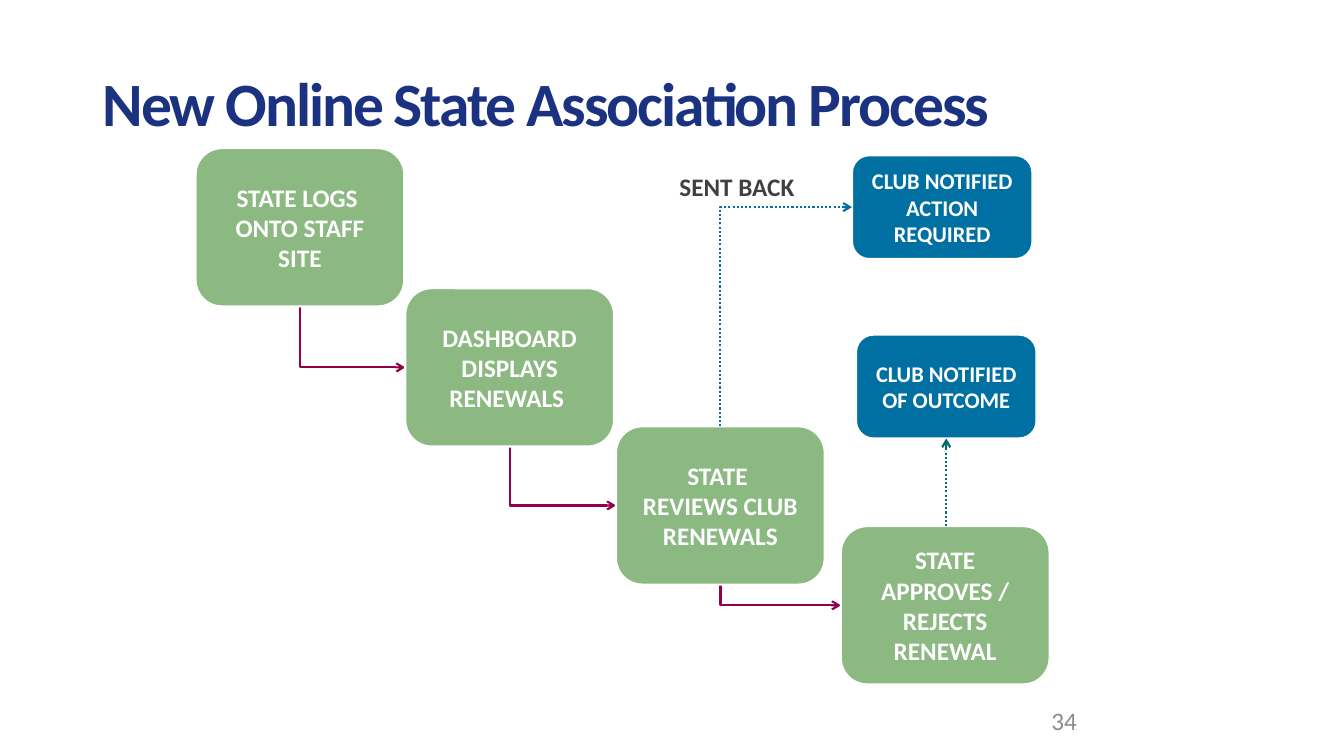
"""Build the slide on the online state association renewal process."""
from lxml.etree import SubElement
from pptx import Presentation
from pptx.dml.color import RGBColor
from pptx.enum.dml import MSO_LINE
from pptx.enum.shapes import MSO_CONNECTOR, MSO_SHAPE
from pptx.enum.text import MSO_ANCHOR, PP_ALIGN
from pptx.oxml.ns import qn
from pptx.util import Inches, Pt

COLORS = {"title": "1B3281", "number": "8C8C8C", "label": "404040", "white": "FFFFFF",
          "step": "8CB882", "notice": "0070A3", "flow": "92004D", "outcome": "006B6D"}
STEP_SIZE, NOTICE_SIZE = (2.07, 1.57), (1.79, 1.03)
STEPS = [
    (1.94, 1.47, "STATE LOGS \nONTO STAFF SITE"),
    (4.02, 2.86, "DASHBOARD DISPLAYS RENEWALS "),
    (6.11, 4.23, "STATE \nREVIEWS CLUB RENEWALS"),
    (8.34, 5.22, "STATE APPROVES / REJECTS RENEWAL"),
]
NOTICES = [
    (8.45, 1.54, "CLUB NOTIFIED ACTION REQUIRED"),
    (8.49, 3.32, "CLUB NOTIFIED OF OUTCOME"),
]
TEXTS = [
    ((0.92, 0.49, 9.88, 1.19), "New Online State Association Process", 44, "title", True),
    ((10.33, 6.95, 3, 0.4), "34", 18, "number", False),
    ((6.64, 1.65, 1.41, 0.4), "SENT BACK", 18, "label", True),
]


def rgb(name):
    return RGBColor.from_string(COLORS[name])


def write(tf, text, size, color, bold):
    tf.word_wrap = True
    tf.text = text
    for p in tf.paragraphs:
        for r in p.runs:
            r.font.name, r.font.size, r.font.bold = "Calibri", Pt(size), bold
            r.font.color.rgb = rgb(color)


def add_box(s, x, y, text, box_size, fill, size):
    sp = s.shapes.add_shape(MSO_SHAPE.ROUNDED_RECTANGLE, *map(Inches, (x, y, *box_size)))
    sp.shadow.inherit = False
    sp.fill.solid()
    sp.fill.fore_color.rgb = rgb(fill)
    sp.line.color.rgb = rgb("white")
    sp.line.width = Pt(1.5)
    tf = sp.text_frame
    write(tf, text, size, "white", True)
    tf.vertical_anchor = MSO_ANCHOR.MIDDLE
    for p in tf.paragraphs:
        p.alignment = PP_ALIGN.CENTER


def add_arrow(s, kind, points, color, dotted):
    c = s.shapes.add_connector(kind, *map(Inches, points))
    c.line.color.rgb = rgb(color)
    c.line.width = Pt(1.5)
    if dotted:
        c.line.dash_style = MSO_LINE.ROUND_DOT
    SubElement(c.line._get_or_add_ln(), qn("a:tailEnd"), type="arrow")
    SubElement(c._element.spPr, qn("a:effectLst"))
    return c


def add_elbow(s, x1, y1, x2, y2, color, dotted=False):
    cx, cy = (x1 + x2) / 2, (y1 + y2) / 2
    half_w, half_h = abs(y2 - y1) / 2, (x2 - x1) / 2
    if y2 > y1:
        half_h, turn = -half_h, 270
    else:
        turn = 90
    points = (cx + half_w, cy + half_h, cx - half_w, cy - half_h)
    c = add_arrow(s, MSO_CONNECTOR.ELBOW, points, color, dotted)
    props = c._element.spPr
    props.find(qn("a:xfrm")).set("rot", str(turn * 60000))
    props.find(qn("a:prstGeom")).set("prst", "bentConnector2")


def main():
    prs = Presentation()
    prs.slide_width, prs.slide_height = Inches(13.33), Inches(7.5)
    s = prs.slides.add_slide(prs.slide_layouts[6])
    step_w, step_h = STEP_SIZE
    notice_w, notice_h = NOTICE_SIZE

    for (x1, y1, _), (x2, y2, _) in zip(STEPS, STEPS[1:]):
        add_elbow(s, x1 + step_w / 2, y1 + step_h, x2, y2 + step_h / 2, "flow")

    boxes = []
    for at, text, size, color, bold in TEXTS:
        tb = s.shapes.add_textbox(*map(Inches, at))
        write(tb.text_frame, text, size, color, bold)
        boxes.append(tb)
    title = boxes[0].text_frame
    title.vertical_anchor = MSO_ANCHOR.MIDDLE
    title.paragraphs[0].line_spacing = 0.75
    title.paragraphs[0].runs[0].font._element.set("spc", "-150")

    for step in STEPS:
        add_box(s, *step, STEP_SIZE, "step", 18)
    for notice in NOTICES:
        add_box(s, *notice, NOTICE_SIZE, "notice", 16)

    review, decision = STEPS[2:]
    action, outcome = NOTICES
    add_elbow(s, review[0] + step_w / 2, review[1],
              action[0], action[1] + notice_h / 2, "notice", True)
    x = outcome[0] + notice_w / 2
    add_arrow(s, MSO_CONNECTOR.STRAIGHT,
              (x, decision[1], x, outcome[1] + notice_h), "outcome", True)
    prs.save("out.pptx")


if __name__ == "__main__":
    main()
